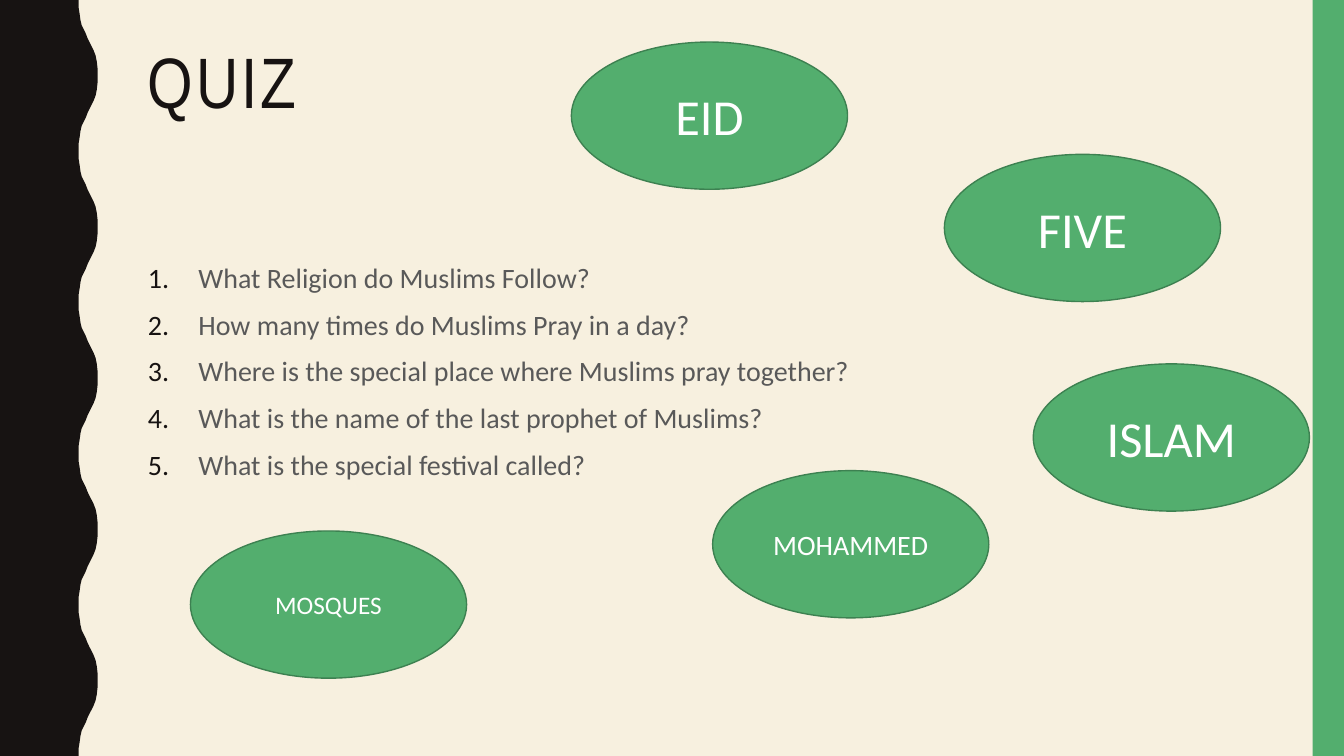
from lxml.etree import SubElement
from pptx import Presentation
from pptx.dml.color import RGBColor
from pptx.enum.shapes import MSO_SHAPE as Preset
from pptx.enum.text import MSO_ANCHOR as Anchor, PP_ALIGN as Align
from pptx.oxml.ns import qn
from pptx.util import Cm, Pt

TITLE = "QUIZ"
QUESTIONS = [
    "What Religion do Muslims Follow?",
    "How many times do Muslims Pray in a day?",
    "Where is the special place where Muslims pray together?",
    "What is the name of the last prophet of Muslims?",
    "What is the special festival called?",
]
ANSWERS = [
    ("FIVE", 23.8, 3.89, 36),
    ("EID", 14.4, 1.06, 36),
    ("ISLAM", 26.04, 9.17, 36),
    ("MOHAMMED", 17.96, 11.86, 20),
    ("MOSQUES", 4.8, 13.38, 18),
]
WAVE_HALF = [
    (1.98, 0), (1.98, 0.18), (2.01, 0.36), (2.03, 0.51), (2.06, 0.64),
    (2.11, 0.74), (2.16, 0.84), (2.21, 0.97), (2.26, 1.07), (2.31, 1.17),
    (2.36, 1.27), (2.41, 1.4), (2.44, 1.55), (2.46, 1.73), (2.46, 1.9),
]
WIDTH, HEIGHT = 33.87, 19.05
WAVE_COUNT = 5
EDGE_WIDTH = 0.79
ANSWER_WIDTH, ANSWER_HEIGHT = 6.96, 3.71
TEXT_LEFT, TEXT_WIDTH = 3.48, 28.27
DARK, GREEN, GREEN_LINE = "171312", "53AE6E", "3D8151"
CREAM, GREY, WHITE = "F7F0DF", "595959", "FFFFFF"


def paint(color_format, color):
    color_format.rgb = RGBColor.from_string(color)


def fill_shape(shape, color):
    shape.shadow.inherit = False
    shape.fill.solid()
    paint(shape.fill.fore_color, color)
    shape.line.fill.background()


def style(paragraph, font_name, size, color):
    font = paragraph.runs[0].font
    font.name, font.size = font_name, Pt(size)
    paint(font.color, color)


def add_text(slide, top, height, text):
    box = slide.shapes.add_textbox(Cm(TEXT_LEFT), Cm(top), Cm(TEXT_WIDTH), Cm(height))
    box.text_frame.word_wrap = True
    box.text_frame.text = text
    return box.text_frame.paragraphs


def number(paragraph):
    properties = paragraph._p.get_or_add_pPr()
    properties.set("marL", str(Cm(1.27)))
    properties.set("indent", str(Cm(-1.27)))
    bullet_color = SubElement(properties, qn("a:buClr"))
    SubElement(bullet_color, qn("a:srgbClr"), val=DARK)
    SubElement(properties, qn("a:buFont"), typeface="Calibri")
    SubElement(properties, qn("a:buAutoNum"), type="arabicPeriod")


def add_wave(slide):
    period = HEIGHT / WAVE_COUNT
    wave = WAVE_HALF + [(x, period - y) for x, y in reversed(WAVE_HALF[1:-1])]
    points = [(Cm(x), Cm(y + period * index)) for index in range(WAVE_COUNT) for x, y in wave]
    points += [(Cm(WAVE_HALF[0][0]), Cm(HEIGHT)), (0, Cm(HEIGHT))]
    builder = slide.shapes.build_freeform(0, 0)
    builder.add_line_segments(points, close=True)
    fill_shape(builder.convert_to_shape(), DARK)


def add_answer(slide, text, left, top, size):
    shape = slide.shapes.add_shape(
        Preset.OVAL, Cm(left), Cm(top), Cm(ANSWER_WIDTH), Cm(ANSWER_HEIGHT))
    fill_shape(shape, GREEN)
    shape.line.width = Pt(1)
    shape.line.fill.solid()
    paint(shape.line.color, GREEN_LINE)
    shape.text_frame.text = text
    shape.text_frame.vertical_anchor = Anchor.MIDDLE
    paragraph = shape.text_frame.paragraphs[0]
    paragraph.alignment = Align.CENTER
    style(paragraph, "Calibri", size, WHITE)


def main():
    presentation = Presentation()
    presentation.slide_width, presentation.slide_height = Cm(WIDTH), Cm(HEIGHT)
    slide = presentation.slides.add_slide(presentation.slide_layouts[6])
    slide.background.fill.solid()
    paint(slide.background.fill.fore_color, CREAM)

    add_wave(slide)
    edge = slide.shapes.add_shape(
        Preset.RECTANGLE, Cm(WIDTH - EDGE_WIDTH), 0, Cm(EDGE_WIDTH), Cm(HEIGHT))
    fill_shape(edge, GREEN)

    title = add_text(slide, 1.06, 4.14, TITLE)[0]
    title.line_spacing = 0.9
    style(title, "Arial Narrow", 51, DARK)
    title.runs[0].font._element.set("spc", "200")

    for index, paragraph in enumerate(add_text(slide, 6.35, 9.98, "\n".join(QUESTIONS))):
        number(paragraph)
        paragraph.line_spacing = 1.1
        if index:
            paragraph.space_before = Pt(7)
        style(paragraph, "Calibri", 20, GREY)

    for answer in ANSWERS:
        add_answer(slide, *answer)
    presentation.save("out.pptx")


if __name__ == "__main__":
    main()
